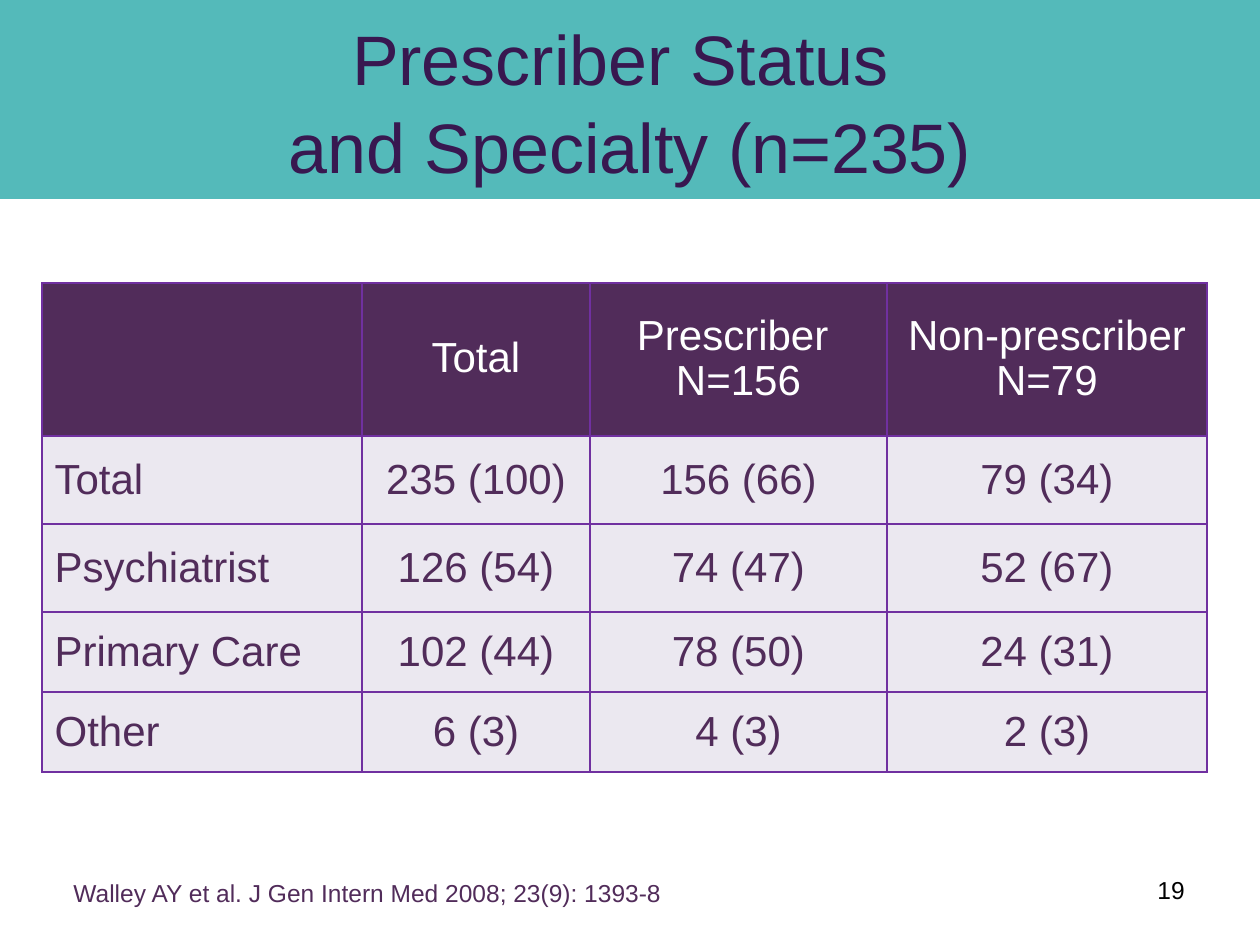
import pptx
import pptx.dml.color
import pptx.enum.shapes
import pptx.enum.text
import pptx.oxml
import pptx.oxml.ns
import pptx.util

COLORS = {
    "band": "54BABA",
    "title": "381850",
    "plum": "512C5A",
    "lilac": "EBE8F0",
    "grid": "7030A0",
    "white": "FFFFFF",
    "black": "000000",
}
FONT = "Arial"
ALIGN = pptx.enum.text.PP_ALIGN
MIDDLE = pptx.enum.text.MSO_ANCHOR.MIDDLE
HEADER = ["", "Total", "Prescriber \nN=156", "Non-prescriber N=79"]
SPECIALTIES = [
    ["Total", "235 (100)", "156 (66)", "79 (34)"],
    ["Psychiatrist", "126 (54)", "74 (47)", "52 (67)"],
    ["Primary Care", "102 (44)", "78 (50)", "24 (31)"],
    ["Other", "6 (3)", "4 (3)", "2 (3)"],
]


def px(length):
    return round(length * 914400 / 126)


def rgb(name):
    return pptx.dml.color.RGBColor.from_string(COLORS[name])


def write(frame, text, size=24, color="plum", align=ALIGN.CENTER, hanging=0, spacing=None):
    frame.word_wrap = True
    frame.text = text
    for paragraph in frame.paragraphs:
        paragraph.alignment = align
        if spacing:
            paragraph.line_spacing = spacing
        if hanging:
            properties = paragraph._p.get_or_add_pPr()
            properties.set("marL", str(px(hanging)))
            properties.set("indent", str(-px(hanging)))
        for run in paragraph.runs:
            run.font.name = FONT
            run.font.size = pptx.util.Pt(size)
            run.font.color.rgb = rgb(color)


class Deck:
    def __init__(self):
        self.presentation = pptx.Presentation()
        self.presentation.slide_width = px(1260)
        self.presentation.slide_height = px(945)
        self.slide = self.presentation.slides.add_slide(self.presentation.slide_layouts[6])

    def band(self, left, top, width, height, color):
        band = self.slide.shapes.add_shape(
            pptx.enum.shapes.MSO_SHAPE.RECTANGLE, px(left), px(top), px(width), px(height))
        band.shadow.inherit = False
        band.fill.solid()
        band.fill.fore_color.rgb = rgb(color)
        band.line.fill.background()

    def text(self, left, top, width, height, text, anchor=None, **style):
        box = self.slide.shapes.add_textbox(px(left), px(top), px(width), px(height))
        box.text_frame.vertical_anchor = anchor
        write(box.text_frame, text, **style)

    def border(self, cell):
        properties = cell._tc.get_or_add_tcPr()
        for side in ("lnL", "lnR", "lnT", "lnB"):
            properties.append(pptx.oxml.parse_xml(
                f'<a:{side} {pptx.oxml.ns.nsdecls("a")} w="12700"><a:solidFill>'
                f'<a:srgbClr val="{COLORS["grid"]}"/></a:solidFill></a:{side}>'))

    def table(self, left, top, widths, heights, rows):
        table = self.slide.shapes.add_table(
            len(rows), len(widths), px(left), px(top), px(sum(widths)), px(sum(heights))).table
        for column, width in zip(table.columns, widths):
            column.width = px(width)
        for r, (height, values) in enumerate(zip(heights, rows)):
            table.rows[r].height = px(height)
            for c, value in enumerate(values):
                cell = table.cell(r, c)
                self.border(cell)
                cell.fill.solid()
                cell.fill.fore_color.rgb = rgb("lilac" if r else "plum")
                cell.vertical_anchor = MIDDLE
                if r:
                    write(cell.text_frame, value, hanging=48,
                          align=ALIGN.CENTER if c else ALIGN.LEFT)
                elif value:
                    write(cell.text_frame, value, color="white", spacing=0.95)


def main():
    deck = Deck()
    deck.band(0, 0, 1260, 199, "band")
    deck.text(1145, 869, 69, 43, "19", size=14, color="black", align=ALIGN.LEFT)
    deck.table(42, 283, [320, 228, 297, 320], [153, 88, 88, 80, 80], [HEADER] + SPECIALTIES)
    deck.text(21, 872, 693, 43, "Walley AY et al. J Gen Intern Med 2008; 23(9): 1393-8", size=14)
    deck.text(0, 0, 1260, 199, "Prescriber Status \vand Specialty (n=235)",
              anchor=MIDDLE, size=40, color="title", spacing=1.05)
    deck.presentation.save("out.pptx")


if __name__ == "__main__":
    main()
